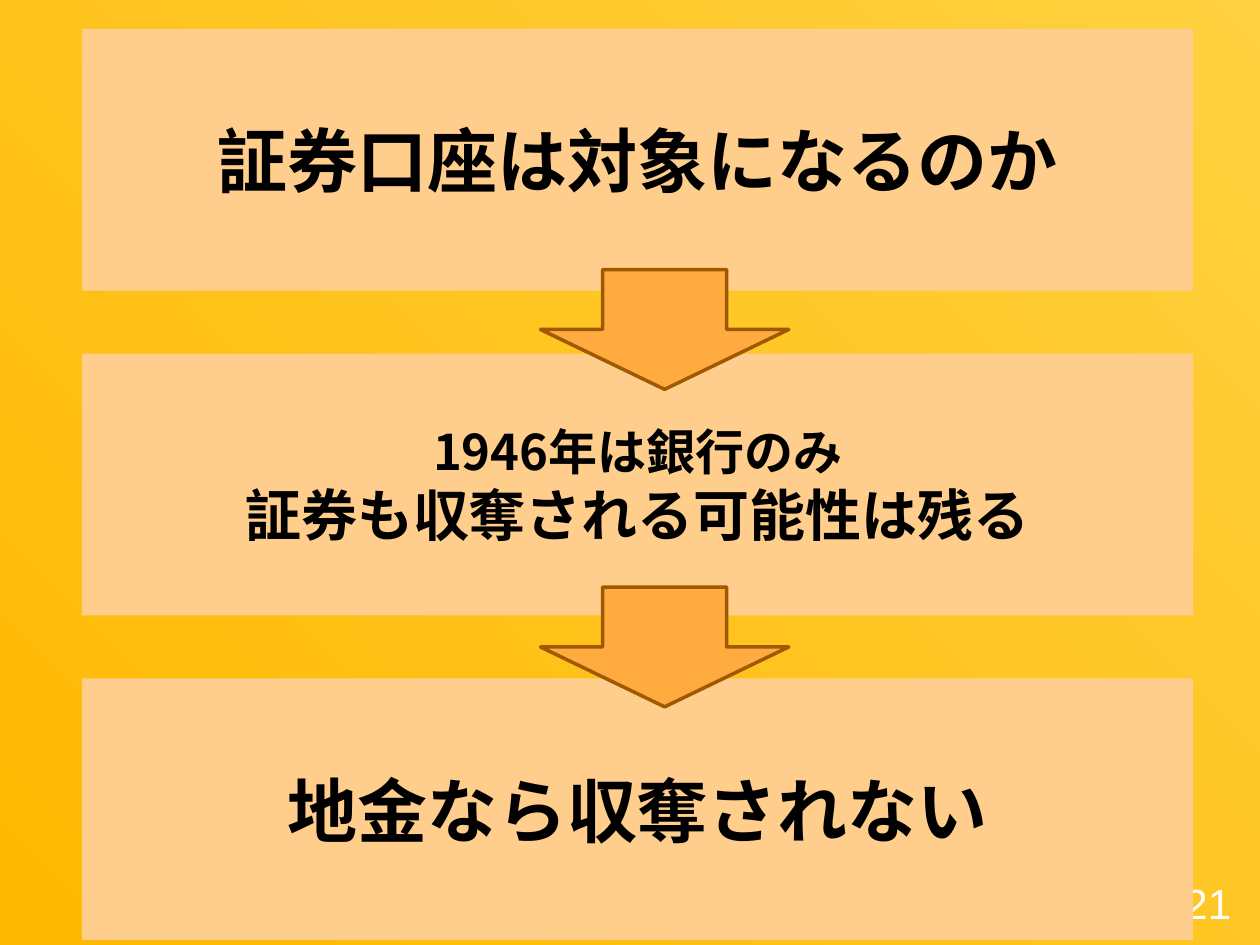
from dataclasses import dataclass

from pptx import Presentation
from pptx.dml.color import RGBColor
from pptx.enum.shapes import MSO_SHAPE
from pptx.enum.text import MSO_ANCHOR, MSO_AUTO_SIZE, PP_ALIGN
from pptx.oxml.ns import qn
from pptx.util import Inches, Pt

RECT, DOWN_ARROW = MSO_SHAPE.RECTANGLE, MSO_SHAPE.DOWN_ARROW
MIDDLE, NO_FIT = MSO_ANCHOR.MIDDLE, MSO_AUTO_SIZE.NONE
CENTER, RIGHT = PP_ALIGN.CENTER, PP_ALIGN.RIGHT
TITLE_ONLY = 5


@dataclass(frozen=True)
class Theme:
    """Colours, fonts and type sizes of the slide."""
    back_start: str = "FFD140"
    back_end: str = "FFB800"
    panel: str = "FFCD8C"
    arrow: str = "FFAB40"
    arrow_line: str = "A05900"
    text: str = "000000"
    light: str = "FFFFFF"
    font: str = "Noto Sans CJK JP"
    number_font: str = "Arial"
    large: int = 40
    medium: int = 32
    small: int = 28
    number: int = 24


THEME = Theme()


def rgb(value):
    """Turn a hex string into a colour."""
    return RGBColor.from_string(value)


def write(p, text, *, size, font=THEME.font, color=THEME.text, bold=True, align=CENTER):
    """Write one formatted run into a paragraph."""
    p.alignment = align
    r = p.add_run()
    r.text = text
    r.font.size, r.font.bold, r.font.name = Pt(size), bold, font
    r.font.color.rgb = rgb(color)
    ea = r.font._element.makeelement(qn("a:ea"), {"typeface": font})
    r.font._element.find(qn("a:latin")).addnext(ea)


def place(sp, box):
    """Move a shape to a box given in inches."""
    sp.left, sp.top, sp.width, sp.height = (Inches(v) for v in box)


def add_shape(s, kind, box, line, width):
    """Add a preset shape without shadow and with a plain outline."""
    sp = s.shapes.add_shape(kind, *(Inches(v) for v in box))
    sp.shadow.inherit = False
    sp.line.color.rgb = rgb(line)
    sp.line.width = Pt(width)
    return sp


def add_backdrop(s, box):
    """Add the diagonal gradient behind everything."""
    sp = add_shape(s, RECT, box, THEME.light, 0.75)
    sp.fill.gradient()
    sp.fill.gradient_angle = 225
    for stop, color, pos in zip(sp.fill.gradient_stops, (THEME.back_start, THEME.back_end), (0, 1)):
        stop.color.rgb = rgb(color)
        stop.position = pos


def add_page_number(s, box, text):
    """Add the page number and return its text box."""
    sp = s.shapes.add_textbox(*(Inches(v) for v in box))
    tf = sp.text_frame
    tf.word_wrap, tf.vertical_anchor = True, MIDDLE
    tf.margin_left = tf.margin_right = tf.margin_top = tf.margin_bottom = Inches(0.1)
    write(tf.paragraphs[0], text, size=THEME.number, font=THEME.number_font,
          color=THEME.light, bold=False, align=RIGHT)
    return sp


def fill_panel(sp, box, lines):
    """Format a shape as a panel with centred lines of text and size."""
    place(sp, box)
    sp.fill.solid()
    sp.fill.fore_color.rgb = rgb(THEME.panel)
    sp.line.fill.background()
    tf = sp.text_frame
    tf.word_wrap, tf.vertical_anchor, tf.auto_size = True, MIDDLE, NO_FIT
    for i, (text, size) in enumerate(lines):
        p = tf.add_paragraph() if i else tf.paragraphs[0]
        write(p, text, size=size)


def add_arrow(s, box):
    """Add an arrow pointing to the next panel."""
    sp = add_shape(s, DOWN_ARROW, box, THEME.arrow_line, 2)
    sp.fill.solid()
    sp.fill.fore_color.rgb = rgb(THEME.arrow)


def add_flow(s, box, steps, gap):
    """Stack the panels in a box, the first as the title, and join them by arrows."""
    left, top, width, height = box
    panel_h = (height - gap * (len(steps) - 1)) / len(steps)
    pitch = panel_h + gap
    for i, lines in enumerate(steps):
        sp = s.shapes.add_shape(RECT, 0, 0, 0, 0) if i else s.shapes.title
        if i:
            sp.shadow.inherit = False
        fill_panel(sp, (left, top + i * pitch, width, panel_h), lines)
    for i in range(len(steps) - 1):
        add_arrow(s, (left + 3.64, 2.14 + i * 2.52, 1.97, 0.95))


def main():
    """Build the slide and save it."""
    prs = Presentation()
    prs.slide_width, prs.slide_height = Inches(10), Inches(7.5)
    s = prs.slides.add_slide(prs.slide_layouts[TITLE_ONLY])
    add_backdrop(s, (-0.05, -0.07, 10.1, 7.61))
    number = add_page_number(s, (9.27, 6.88, 0.6, 0.57), "21")
    number.element.addnext(s.shapes.title.element)
    steps = [
        [("証券口座は対象になるのか", THEME.large)],
        [("1946年は銀行のみ", THEME.small), ("証券も収奪される可能性は残る", THEME.medium)],
        [("地金なら収奪されない", THEME.large)],
    ]
    add_flow(s, (0.65, 0.23, 8.82, 7.23), steps, gap=0.5)
    prs.save("out.pptx")


if __name__ == "__main__":
    main()
